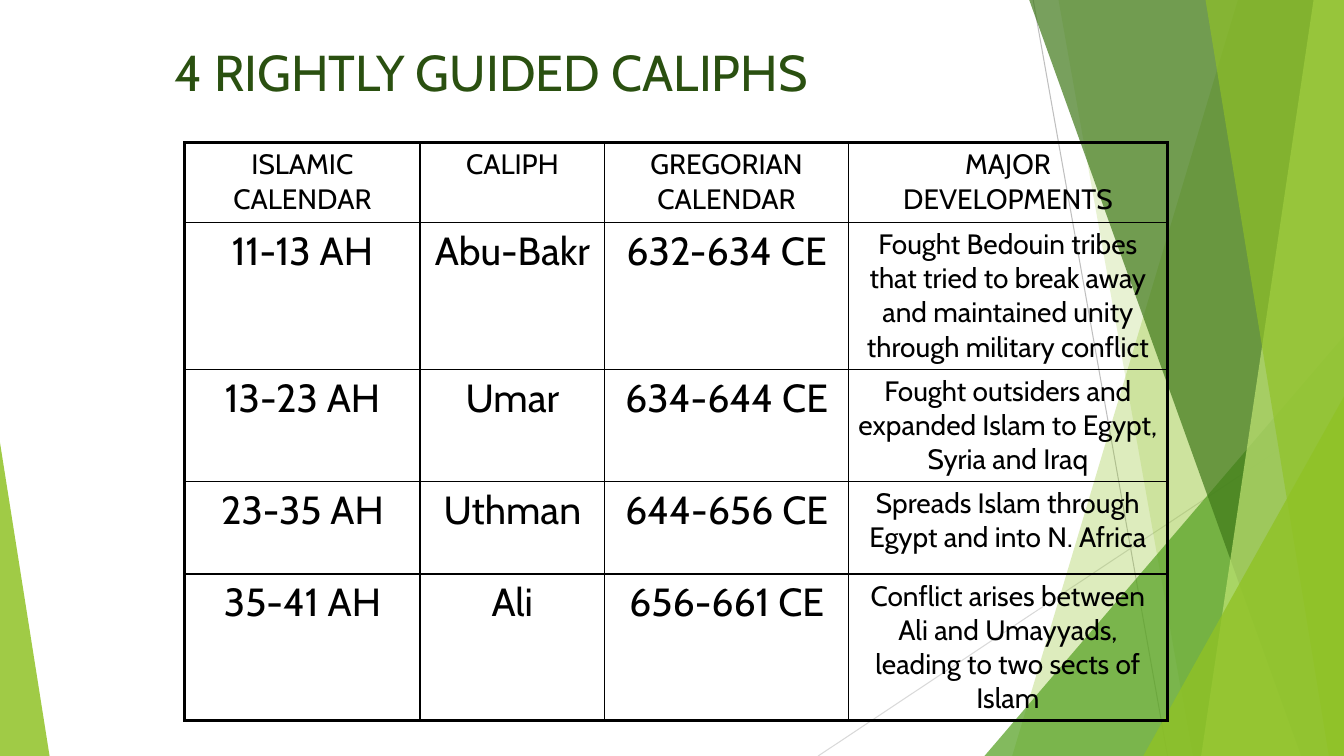
from dataclasses import dataclass

from lxml import etree
from pptx import Presentation
from pptx import util as u
from pptx.dml import color
from pptx.enum import shapes, text
from pptx.oxml import ns

COLS, ROWS = 160, 90
UNIT = u.Inches(1) // 12
FONT = "Cabin"
BLACK = "000000"
THIN, THICK = 1, 2.25


@dataclass(frozen=True)
class Ray:
    x1: float
    y1: float
    x2: float
    y2: float
    fill: str


@dataclass(frozen=True)
class Band:
    top: float
    bottom: float
    fill: str
    opacity: int


@dataclass(frozen=True)
class Wedge:
    left: float
    top: float
    width: float
    tip: int
    fill: str
    opacity: int


RAYS = [
    Ray(123, 0, 139, ROWS, "BFBFBF"),
    Ray(COLS, 48.4, 97.4, ROWS, "D9D9D9"),
]
FACETS = [
    Band(147.4, 120.5, "90C226", 30),
    Band(126, 142, "90C226", 20),
    Wedge(117.2, 40, 42.8, 1, "54A021", 72),
    Band(122.5, 154.9, "3F7819", 70),
    Band(156.4, 143, "C0E474", 70),
    Band(143.5, 158.2, "90C226", 65),
    Wedge(136.1, 47.2, 23.9, 1, "90C226", 80),
    Wedge(0, 52.7, 5.9, 0, "90C226", 85),
]

COL_WIDTHS = [28, 22, 29, 38]
ROW_HEIGHTS = [9.5, 17.2, 13.2, 11, 17.2]
CALIPHS = [
    ("ISLAMIC CALENDAR", "CALIPH", "GREGORIAN CALENDAR", "MAJOR DEVELOPMENTS"),
    ("11-13 AH", "Abu-Bakr", "632-634 CE",
     "Fought Bedouin tribes that tried to break away and maintained unity "
     "through military conflict"),
    ("13-23 AH", "Umar", "634-644 CE",
     "Fought outsiders and expanded Islam to Egypt, Syria and Iraq"),
    ("23-35 AH", "Uthman", "644-656 CE",
     "Spreads Islam through Egypt and into N. Africa"),
    ("35-41 AH", "Ali", "656-661 CE",
     "Conflict arises between Ali and Umayyads, leading to two sects of Islam"),
]


def grid(n: float) -> u.Emu:
    return u.Emu(round(n * UNIT))


def rgb(value: str) -> color.RGBColor:
    return color.RGBColor.from_string(value)


def write(tf, content: str, size: float, ink: str) -> None:
    p = tf.paragraphs[0]
    p.text = content
    p.alignment = text.PP_ALIGN.CENTER
    p.font.name = FONT
    p.font.size = u.Pt(size)
    p.font.color.rgb = rgb(ink)


def draw_ray(slide, ray: Ray) -> None:
    line = slide.shapes.add_connector(
        shapes.MSO_CONNECTOR.STRAIGHT,
        grid(ray.x1), grid(ray.y1), grid(ray.x2), grid(ray.y2))
    line.line.color.rgb = rgb(ray.fill)
    line.line.width = u.Pt(0.75)
    etree.SubElement(line._element.spPr, ns.qn("a:effectLst"))


def add_band(slide, band: Band):
    top = grid(-0.1)
    outline = slide.shapes.build_freeform(grid(band.top), top)
    outline.add_line_segments([
        (grid(COLS), top),
        (grid(COLS), grid(ROWS)),
        (grid(band.bottom), grid(ROWS)),
    ])
    return outline.convert_to_shape()


def add_wedge(slide, wedge: Wedge):
    sp = slide.shapes.add_shape(
        shapes.MSO_SHAPE.ISOSCELES_TRIANGLE, grid(wedge.left), grid(wedge.top),
        grid(wedge.width), grid(ROWS - wedge.top))
    sp.adjustments[0] = wedge.tip
    return sp


def draw_facet(slide, facet: Band | Wedge) -> None:
    add = add_band if isinstance(facet, Band) else add_wedge
    sp = add(slide, facet)
    sp.shadow.inherit = False
    sp.line.fill.background()
    sp.fill.solid()
    sp.fill.fore_color.rgb = rgb(facet.fill)
    clr = sp._element.spPr.find(ns.qn("a:solidFill"))[0]
    etree.SubElement(clr, ns.qn("a:alpha"), val=str(facet.opacity * 1000))


def draw_title(slide) -> None:
    title = slide.shapes.title
    title.left, title.top = grid(9), grid(4)
    title.width, title.height = grid(99), grid(10)
    tf = title.text_frame
    tf.word_wrap = True
    tf.vertical_anchor = text.MSO_ANCHOR.MIDDLE
    write(tf, "4 RIGHTLY GUIDED CALIPHS", 36, "2A5010")
    tf.paragraphs[0].line_spacing = 0.9
    slide.shapes._spTree.append(title._element)


def set_borders(cell, widths: dict[str, float]) -> None:
    tc_pr = cell._tc.get_or_add_tcPr()
    for i, (side, width) in enumerate(widths.items()):
        ln = etree.Element(ns.qn(f"a:ln{side}"), w=str(u.Pt(width)))
        fill = etree.SubElement(ln, ns.qn("a:solidFill"))
        etree.SubElement(fill, ns.qn("a:srgbClr"), val=BLACK)
        tc_pr.insert(i, ln)


def draw_table(slide) -> None:
    n_rows, n_cols = len(ROW_HEIGHTS), len(COL_WIDTHS)
    table = slide.shapes.add_table(
        n_rows, n_cols, grid(22), grid(17),
        grid(sum(COL_WIDTHS)), grid(sum(ROW_HEIGHTS))).table
    table.first_row = table.horz_banding = False
    for column, width in zip(table.columns, COL_WIDTHS):
        column.width = grid(width)
    for r, (row, height) in enumerate(zip(table.rows, ROW_HEIGHTS)):
        row.height = grid(height)
        for c, cell in enumerate(row.cells):
            small = r == 0 or c == n_cols - 1
            write(cell.text_frame, CALIPHS[r][c], 20 if small else 28, BLACK)
            cell.fill.background()
            outer = {"L": c == 0, "R": c == n_cols - 1,
                     "T": r == 0, "B": r == n_rows - 1}
            set_borders(cell, {side: THICK if edge else THIN
                               for side, edge in outer.items()})


def main() -> None:
    prs = Presentation()
    prs.slide_width, prs.slide_height = grid(COLS), grid(ROWS)
    slide = prs.slides.add_slide(prs.slide_layouts.get_by_name("Title Only"))
    for ray in RAYS:
        draw_ray(slide, ray)
    for facet in FACETS:
        draw_facet(slide, facet)
    draw_title(slide)
    draw_table(slide)
    prs.save("out.pptx")


if __name__ == "__main__":
    main()
